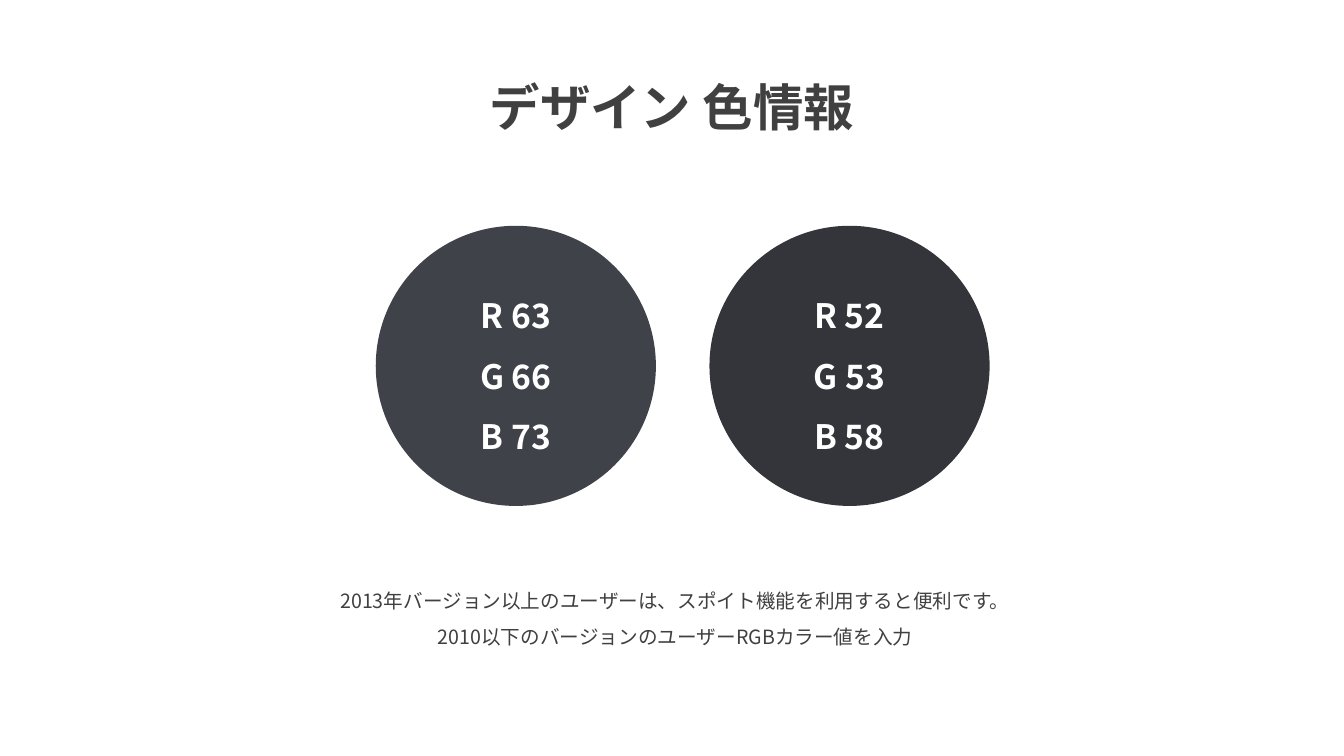
from lxml import etree
from pptx import Presentation
from pptx.dml.color import RGBColor
from pptx.enum import shapes, text
from pptx.oxml.ns import qn
from pptx.util import Cm, Pt

TITLE = ["デザイン 色情報"]
NOTES = [
    "2013年バージョン以上のユーザーは、スポイト機能を利用すると便利です。",
    "2010以下のバージョンのユーザーRGBカラー値を入力",
]
SWATCHES = [RGBColor(63, 66, 73), RGBColor(52, 53, 58)]

WHITE = RGBColor(255, 255, 255)
GREY = RGBColor(64, 64, 64)
FONT = "Noto Sans CJK KR"

SWATCH_LEFT, SWATCH_TOP = 9.47, 5.69
SWATCH_SIZE, SWATCH_STEP = 7.06, 8.41


def write_lines(box, lines, size, color, bold):
    frame = box.text_frame
    frame.word_wrap = True
    frame.text = "\n".join(lines)
    for para in frame.paragraphs:
        para.alignment = text.PP_ALIGN.CENTER
        para.line_spacing = 1.5
        for span in para.runs:
            font_format = {"name": FONT, "size": Pt(size), "bold": bold}
            for name, value in font_format.items():
                setattr(span.font, name, value)
            span.font.color.rgb = color
            # Japanese glyphs take their typeface from a:ea
            east_asian = etree.SubElement(span.font._element, qn("a:ea"))
            east_asian.set("typeface", FONT)


def add_swatch(page, left, color):
    box = page.shapes.add_shape(
        shapes.MSO_SHAPE.OVAL,
        Cm(left), Cm(SWATCH_TOP), Cm(SWATCH_SIZE), Cm(SWATCH_SIZE))
    box.shadow.inherit = False
    box.fill.solid()
    box.fill.fore_color.rgb = color
    box.line.fill.background()
    box.text_frame.vertical_anchor = text.MSO_ANCHOR.MIDDLE
    channels = [f"{letter} {value}" for letter, value in zip("RGB", color)]
    write_lines(box, channels, 24, WHITE, True)


def add_caption(page, area, lines, size, bold):
    box = page.shapes.add_textbox(*map(Cm, area))
    write_lines(box, lines, size, GREY, bold)
    box.text_frame.auto_size = text.MSO_AUTO_SIZE.SHAPE_TO_FIT_TEXT


def main():
    deck = Presentation()
    deck.slide_width, deck.slide_height = Cm(33.87), Cm(19.05)
    page = deck.slides.add_slide(deck.slide_layouts[6])
    for index, color in enumerate(SWATCHES):
        add_swatch(page, SWATCH_LEFT + index * SWATCH_STEP, color)
    add_caption(page, (10.77, 1.02, 12.32, 2.31), TITLE, 36, True)
    add_caption(page, (6.4, 14.43, 21.23, 1.96), NOTES, 14, False)
    deck.save("out.pptx")


if __name__ == "__main__":
    main()
